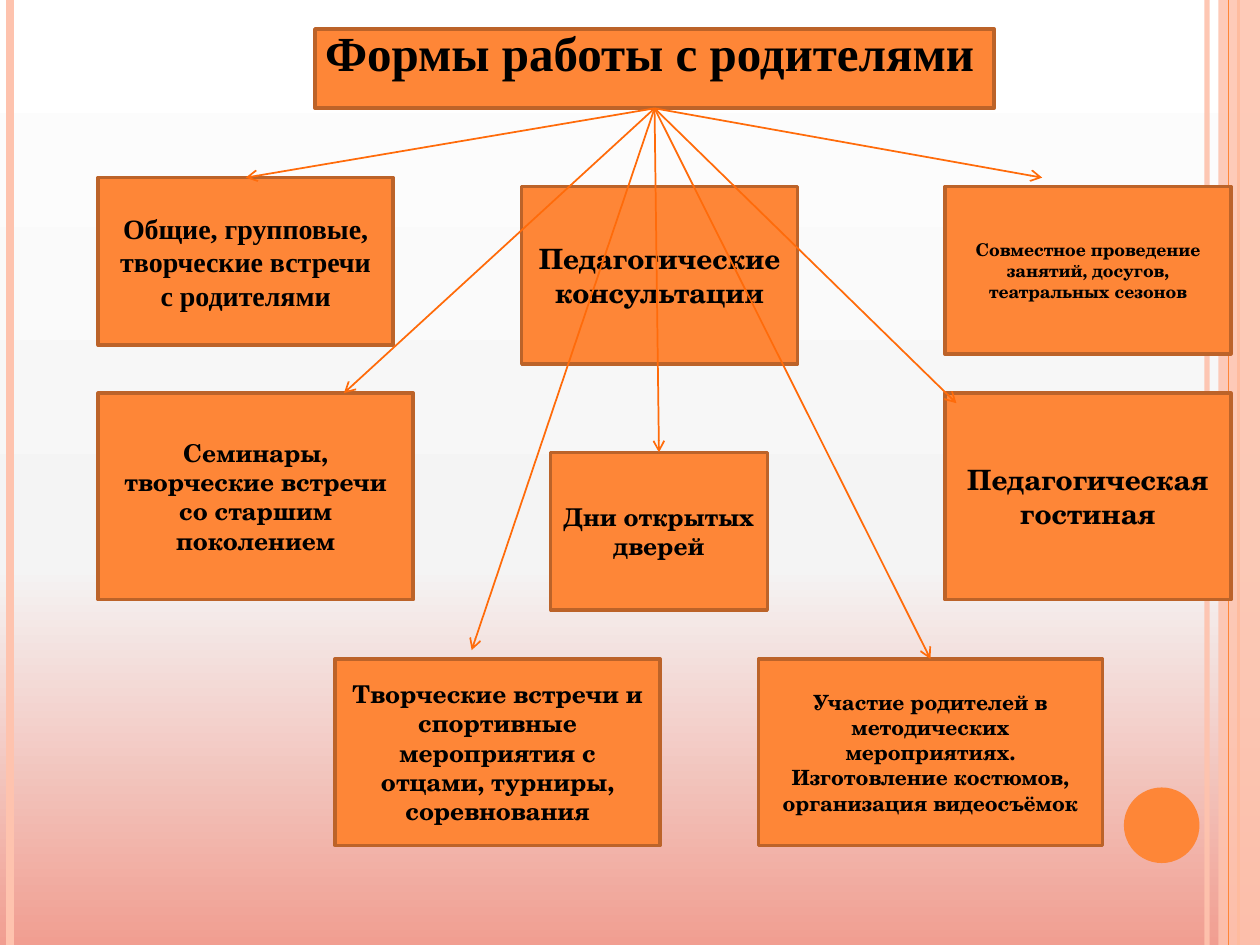
from copy import deepcopy
from dataclasses import dataclass

from pptx import Presentation
from pptx.dml.color import RGBColor
from pptx.enum.shapes import MSO_CONNECTOR, MSO_SHAPE
from pptx.enum.text import MSO_ANCHOR, MSO_AUTO_SIZE, PP_ALIGN
from pptx.oxml.ns import qn
from pptx.util import Inches, Pt

LINE = MSO_CONNECTOR.STRAIGHT
RECT, OVAL = MSO_SHAPE.RECTANGLE, MSO_SHAPE.OVAL


@dataclass(frozen=True)
class Theme:
    orange: str = "FE8637"
    edge: str = "BC6329"
    arrow: str = "FF6B0A"
    peach: str = "FEC3AE"
    text: str = "000000"
    serif: str = "Times New Roman"
    school: str = "TeX Gyre Schola"
    head: int = 28
    large: int = 16
    medium: int = 14
    small: int = 12
    tiny: int = 10


T = Theme()
WIDTH, HEIGHT = 10, 7.5
BACK = [(0, "F19E91"), (0.4, "F4F4F4"), (1, "FFFFFF")]

TITLE = "Формы работы с родителями"
TITLE_BOX = (2.5, 0.23, 5.39, 0.63)
TITLE_TEXT = (2.48, 0.13, 5.41, 0.57)

# Columns and rows shared by the boxes
LEFT, RIGHT, SIDE = 0.78, 7.5, 2.27
TOP, MIDDLE, BOTTOM = 1.48, 3.12, 5.23
ROW_1, ROW_2, ROW_3 = 1.33, 1.64, 1.48

# Text, place, size, font, arrow tip: share of the width, drop from the top edge
BOXES = [
    ("Общие, групповые, творческие встречи с родителями",
     (LEFT, 1.41, 2.34, ROW_1), T.large, T.serif, (0.5, 0)),
    ("Семинары, творческие встречи со старшим поколением",
     (LEFT, MIDDLE, 2.5, ROW_2), T.medium, T.school, (0.78, 0)),
    ("Дни открытых дверей",
     (4.37, 3.59, 1.72, 1.25), T.medium, T.school, (0.5, 0)),
    ("Совместное проведение занятий, досугов, театральных сезонов",
     (RIGHT, TOP, SIDE, ROW_1), T.tiny, T.school, (0.34, -0.07)),
    ("Педагогические консультации",
     (4.14, TOP, 2.19, 1.41), T.large, T.school, None),
    ("Педагогическая гостиная",
     (RIGHT, MIDDLE, SIDE, ROW_2), T.large, T.school, (0.04, 0.08)),
    ("Творческие встречи и спортивные мероприятия с отцами, турниры, соревнования",
     (2.66, BOTTOM, 2.58, ROW_3), T.medium, T.school, (0.42, -0.07)),
    ("Участие родителей в методических мероприятиях. "
     "Изготовление костюмов, организация видеосъёмок",
     (6.02, BOTTOM, 2.73, ROW_3), T.small, T.school, (0.5, 0)),
]

# Upright lines: x, colour, width, opacity
STRIPES_BACK = [(9.58, T.peach, 3, 93), (0.08, T.peach, 4.5, 100),
                (9.83, T.orange, 1.5, 100)]
STRIPES_FRONT = [(9.75, T.orange, 0.75, 100)]
BAND = (9.67, 0, 0.33, HEIGHT)
DOT = (8.92, 6.25, 0.6, 0.6)


def rgb(color):
    return RGBColor.from_string(color)


def fade(node, share):
    """Set the opacity, in percent, of the colour inside node."""
    color = next(node.iter(qn("a:srgbClr")))
    color.makeelement(qn("a:alpha"), {})
    alpha = color.makeelement(qn("a:alpha"), {"val": str(share * 1000)})
    color.append(alpha)


def paint(slide):
    """Fill the background, with the first colour at the bottom."""
    fill = slide.background.fill
    fill.gradient()
    fill.gradient_angle = 90
    stops = next(slide.element.iter(qn("a:gsLst")))
    stops.append(deepcopy(stops[0]))
    for stop, (place, color) in zip(fill.gradient_stops, BACK):
        stop.position = place
        stop.color.rgb = rgb(color)


def add_line(slide, start, end, color, width, share=100, arrow=False):
    ends = [Inches(n) for n in (*start, *end)]
    item = slide.shapes.add_connector(LINE, *ends)
    item.line.color.rgb = rgb(color)
    item.line.width = Pt(width)
    props = item.element.spPr
    if share < 100:
        fade(props, share)
    if arrow:
        pen = props.find(qn("a:ln"))
        pen.append(pen.makeelement(qn("a:tailEnd"), {"type": "arrow"}))
    props.append(props.makeelement(qn("a:effectLst"), {}))


def add_form(slide, kind, place, color, edge=None):
    form = slide.shapes.add_shape(kind, *map(Inches, place))
    form.shadow.inherit = False
    form.fill.solid()
    form.fill.fore_color.rgb = rgb(color)
    if edge:
        form.line.color.rgb = rgb(edge)
        form.line.width = Pt(2)
    else:
        form.line.fill.background()
    return form


def write(frame, text, size, font, align):
    frame.text = text
    para = frame.paragraphs[0]
    para.alignment = align
    para.font.size = Pt(size)
    para.font.name = font
    para.font.bold = True
    para.font.color.rgb = rgb(T.text)


def add_stripes(slide, stripes):
    for x, color, width, share in stripes:
        add_line(slide, (x, 0), (x, HEIGHT), color, width, share)


def add_title(slide):
    add_form(slide, RECT, TITLE_BOX, T.orange, T.edge)
    title = slide.shapes.title
    title.left, title.top, title.width, title.height = map(Inches, TITLE_TEXT)
    frame = title.text_frame
    write(frame, TITLE, T.head, T.serif, PP_ALIGN.LEFT)
    frame.word_wrap = False
    frame.auto_size = MSO_AUTO_SIZE.SHAPE_TO_FIT_TEXT
    frame.vertical_anchor = MSO_ANCHOR.TOP
    slide.shapes.element.append(title.element)  # bring above its box


def main():
    deck = Presentation()
    deck.slide_width, deck.slide_height = Inches(WIDTH), Inches(HEIGHT)
    slide = deck.slides.add_slide(deck.slide_layouts[5])
    paint(slide)

    add_stripes(slide, STRIPES_BACK)
    band = add_form(slide, RECT, BAND, T.peach)
    fade(band.element.spPr, 87)
    add_stripes(slide, STRIPES_FRONT)
    add_form(slide, OVAL, DOT, T.orange)
    add_title(slide)

    for text, place, size, font, _ in BOXES:
        box = add_form(slide, RECT, place, T.orange, T.edge)
        box.text_frame.vertical_anchor = MSO_ANCHOR.MIDDLE
        write(box.text_frame, text, size, font, PP_ALIGN.CENTER)

    x, y, w, h = TITLE_BOX
    hub = (x + w / 2, y + h)
    for _, (x, y, w, h), _, _, tip in BOXES:
        if tip:
            share, drop = tip
            add_line(slide, hub, (x + w * share, y + drop), T.arrow, 1, arrow=True)

    deck.save("out.pptx")


if __name__ == "__main__":
    main()
